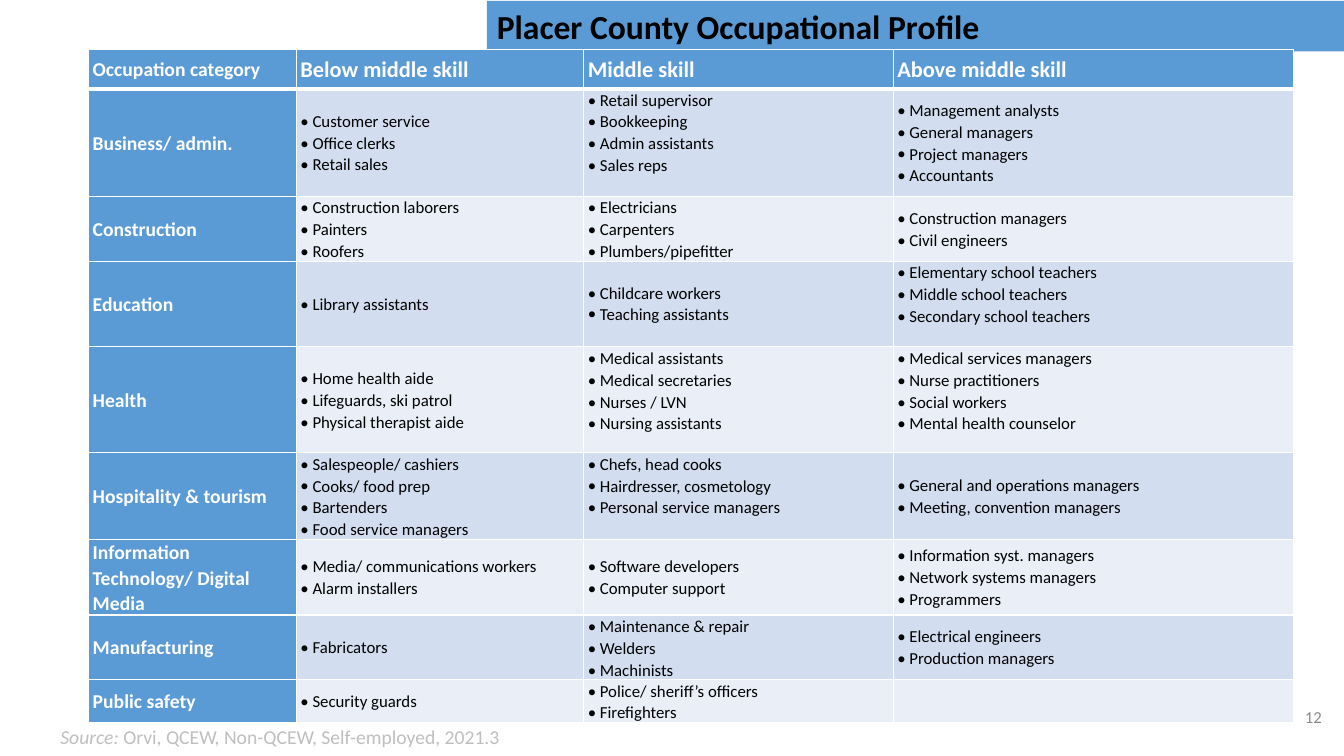
from lxml import etree
from pptx import Presentation
from pptx.dml.color import RGBColor
from pptx.enum.shapes import MSO_SHAPE
from pptx.enum.text import MSO_ANCHOR, PP_ALIGN
from pptx.oxml.ns import qn
from pptx.util import Inches, Pt

RECT = MSO_SHAPE.RECTANGLE
TOP, MID = MSO_ANCHOR.TOP, MSO_ANCHOR.MIDDLE
LEFT, RIGHT = PP_ALIGN.LEFT, PP_ALIGN.RIGHT

TITLE = "Placer County Occupational Profile"
SOURCE = ["Source: ", "Orvi, QCEW, Non-QCEW, Self-employed, 2021.3"]
PAGE = "12"
HEADS = ["Occupation category", "Below middle skill", "Middle skill", "Above middle skill"]
JOBS = [
    ("Business/ admin.",
     ["Customer service", "Office clerks", "Retail sales"],
     ["Retail supervisor", "Bookkeeping", "Admin assistants", "Sales reps"],
     ["Management analysts", "General managers", "Project managers", "Accountants"]),
    ("Construction",
     ["Construction laborers", "Painters", "Roofers"],
     ["Electricians", "Carpenters", "Plumbers/pipefitter"],
     ["Construction managers", "Civil engineers"]),
    ("Education",
     ["Library assistants"],
     ["Childcare workers", "Teaching assistants"],
     ["Elementary school teachers", "Middle school teachers", "Secondary school teachers"]),
    ("Health",
     ["Home health aide", "Lifeguards, ski patrol", "Physical therapist aide"],
     ["Medical assistants", "Medical secretaries", "Nurses / LVN", "Nursing assistants"],
     ["Medical services managers", "Nurse practitioners", "Social workers",
      "Mental health counselor"]),
    ("Hospitality & tourism",
     ["Salespeople/ cashiers", "Cooks/ food prep", "Bartenders", "Food service managers"],
     ["Chefs, head cooks", "Hairdresser, cosmetology", "Personal service managers"],
     ["General and operations managers", "Meeting, convention managers"]),
    ("Information Technology/ Digital Media",
     ["Media/ communications workers", "Alarm installers"],
     ["Software developers", "Computer support"],
     ["Information syst. managers", "Network systems managers", "Programmers"]),
    ("Manufacturing",
     ["Fabricators"],
     ["Maintenance & repair", "Welders", "Machinists"],
     ["Electrical engineers", "Production managers"]),
    ("Public safety",
     ["Security guards"],
     ["Police/ sheriff’s officers", "Firefighters"],
     []),
]
RAISED = {(1, 2), (3, 3), (4, 2), (4, 3), (5, 2)}
TIGHT = {(3, 2)}
WIDTHS = [2.06, 2.85, 3.07, 3.97]
HEIGHTS = [0.39, 1.07, 0.64, 0.85, 1.05, 0.86, 0.75, 0.64, 0.42]

THEME = {
    "font": "Calibri",
    "blue": "5B9BD5",
    "rule": "FFFFFF",
    "bands": ["EAEFF7", "D2DEEF"],
    "title": {"size": 24, "color": "000000", "bold": True},
    "head": {"size": 16, "color": "FFFFFF", "bold": True},
    "label": {"size": 14, "color": "FFFFFF", "bold": True},
    "job": {"size": 12, "color": "000000", "bold": False},
    "source": {"size": 14, "color": "BFBFBF"},
    "page": {"size": 12, "color": "8C8C8C"},
}


def paint(part, color):
    part.fill.solid()
    part.fill.fore_color.rgb = RGBColor.from_string(color)


def style(font, kind):
    form = dict(THEME[kind], name=THEME["font"])
    font.color.rgb = RGBColor.from_string(form.pop("color"))
    form["size"] = Pt(form["size"])
    for key, val in form.items():
        setattr(font, key, val)


def write(para, text, kind, align=LEFT):
    para.alignment = align
    run = para.add_run()
    run.text = text
    style(run.font, kind)
    return run


def bullet(para):
    props = para._p.get_or_add_pPr()
    gap = Inches(0.12)
    props.set("marL", str(gap))
    props.set("indent", str(-gap))
    etree.SubElement(props, qn("a:buFont")).set("typeface", THEME["font"])
    etree.SubElement(props, qn("a:buChar")).set("char", "•")


def border(cell, width):
    line = etree.Element(qn("a:lnB"), w=str(Pt(width)))
    fill = etree.SubElement(line, qn("a:solidFill"))
    etree.SubElement(fill, qn("a:srgbClr")).set("val", THEME["rule"])
    cell._tc.get_or_add_tcPr().insert(0, line)


def box(slide, left, top, width, height):
    frame = slide.shapes.add_textbox(*map(Inches, (left, top, width, height))).text_frame
    frame.word_wrap = True
    return frame


def fill_cell(cell, row, col, lines, kind):
    form = {"margin_left": Inches(0.04), "margin_right": Inches(0.04),
            "margin_top": 0, "margin_bottom": 0,
            "vertical_anchor": TOP if (row, col) in RAISED else MID}
    for key, val in form.items():
        setattr(cell, key, val)
    paint(cell, THEME["bands"][row % 2] if kind == "job" else THEME["blue"])
    if row == 0:
        border(cell, 3)
    frame = cell.text_frame
    for num, line in enumerate(lines):
        para = frame.add_paragraph() if num else frame.paragraphs[0]
        para.line_spacing = 1.0 if (row, col) in TIGHT else 1.07
        write(para, line, kind)
        if kind == "job":
            bullet(para)


def add_grid(slide):
    rows = [[[head] for head in HEADS]] + [[[name], *jobs] for name, *jobs in JOBS]
    grid = slide.shapes.add_table(
        len(rows), len(WIDTHS), Inches(0.88), Inches(0.49),
        Inches(sum(WIDTHS)), Inches(sum(HEIGHTS))).table
    grid.first_col = True
    for col, width in zip(grid.columns, WIDTHS):
        col.width = Inches(width)
    for row, height in zip(grid.rows, HEIGHTS):
        row.height = Inches(height)
    for row, cells in enumerate(rows):
        for col, lines in enumerate(cells):
            kind = "label" if col == 0 else "head" if row == 0 else "job"
            fill_cell(grid.cell(row, col), row, col, lines, kind)


def main():
    deck = Presentation()
    deck.slide_width, deck.slide_height = Inches(13.33), Inches(7.5)
    slide = deck.slides.add_slide(deck.slide_layouts[6])

    bar = slide.shapes.add_shape(RECT, *map(Inches, (4.83, 0.01, 9.03, 0.5)))
    bar.shadow.inherit = False
    paint(bar, THEME["blue"])
    bar.line.fill.background()
    bar.text_frame.vertical_anchor = TOP
    write(bar.text_frame.paragraphs[0], TITLE, "title")

    para = box(slide, 0.5, 7.14, 11.48, 0.34).paragraphs[0]
    for text, slant in zip(SOURCE, (True, False)):
        write(para, text, "source").font.italic = slant

    add_grid(slide)

    frame = box(slide, 10.21, 6.91, 3, 0.4)
    frame.vertical_anchor = MID
    write(frame.paragraphs[0], PAGE, "page", RIGHT)
    deck.save("out.pptx")


if __name__ == "__main__":
    main()
